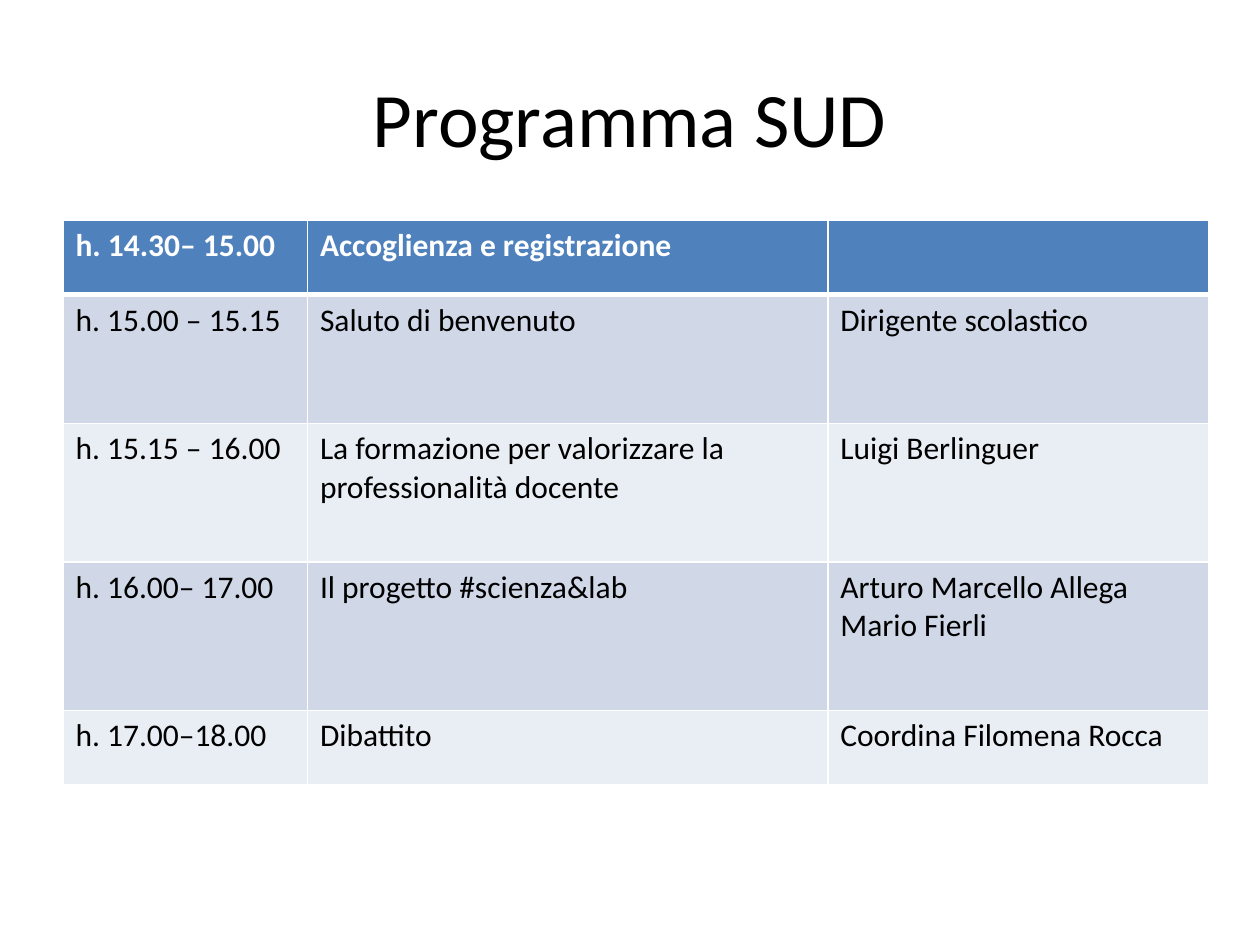
"""Build the "Programma SUD" slide: a title above a timetable."""
import pptx
import pptx.dml.color
import pptx.enum.text
import pptx.oxml
import pptx.oxml.ns
import pptx.util
from pptx.util import Inches

COLOURS = {
    "text": "000000",
    "white": "FFFFFF",
    "header": "4F81BD",
    "odd_row": "D0D8E8",
    "even_row": "E9EDF4",
}
PROGRAMME = [
    ("h. 14.30– 15.00", "Accoglienza e registrazione", ""),
    ("h. 15.00 – 15.15", "Saluto di benvenuto", "Dirigente scolastico"),
    ("h. 15.15 – 16.00", "La formazione per valorizzare la professionalità docente", "Luigi Berlinguer"),
    ("h. 16.00– 17.00", "Il progetto #scienza&lab", "Arturo Marcello Allega\nMario Fierli"),
    ("h. 17.00–18.00", "Dibattito", "Coordina Filomena Rocca"),
]
COLUMN_WIDTHS = [1.94, 4.13, 3.02]
ROW_HEIGHTS = [0.59, 1.02, 1.1, 1.18, 0.59]


def format_text(text_frame, colour, **font_values):
    for paragraph in text_frame.paragraphs:
        paragraph.font.color.rgb = pptx.dml.color.RGBColor.from_string(COLOURS[colour])
        for name, value in {"name": "Calibri", **font_values}.items():
            setattr(paragraph.font, name, value)
        for run in paragraph.runs:
            run.font.color.rgb = pptx.dml.color.RGBColor.from_string(COLOURS[colour])
            for name, value in {"name": "Calibri", **font_values}.items():
                setattr(run.font, name, value)


def add_border(cell, side, points):
    cell._tc.get_or_add_tcPr().append(pptx.oxml.parse_xml(
        f'<a:ln{side} {pptx.oxml.ns.nsdecls("a")} w="{pptx.util.Pt(points)}">'
        f'<a:solidFill><a:srgbClr val="{COLOURS["white"]}"/></a:solidFill></a:ln{side}>'
    ))


presentation = pptx.Presentation()
presentation.slide_width = Inches(10)
presentation.slide_height = Inches(7.5)
slide = presentation.slides.add_slide(presentation.slide_layouts[6])

title = slide.shapes.add_textbox(Inches(0.5), Inches(0.3), Inches(9), Inches(1.25))
title_frame = title.text_frame
title_frame.text = "Programma SUD"
title_frame.word_wrap = True
title_frame.vertical_anchor = pptx.enum.text.MSO_ANCHOR.MIDDLE
title_frame.paragraphs[0].alignment = pptx.enum.text.PP_ALIGN.CENTER
format_text(title_frame, "text", size=pptx.util.Pt(44))

table = slide.shapes.add_table(
    len(PROGRAMME), len(COLUMN_WIDTHS), Inches(0.5), Inches(1.75),
    Inches(sum(COLUMN_WIDTHS)), Inches(sum(ROW_HEIGHTS)),
).table
for column, width in zip(table.columns, COLUMN_WIDTHS):
    column.width = Inches(width)
for row, height in zip(table.rows, ROW_HEIGHTS):
    row.height = Inches(height)

for row_index, entries in enumerate(PROGRAMME):
    is_header = row_index == 0
    fill_name = "header" if is_header else "odd_row" if row_index % 2 else "even_row"
    for column_index, entry in enumerate(entries):
        cell = table.cell(row_index, column_index)
        cell.text = entry
        format_text(cell.text_frame, "white" if is_header else "text",
                    size=pptx.util.Pt(18), bold=is_header)
        borders = {"L": 1, "R": 1, "T": 3 if row_index == 1 else 1, "B": 3 if is_header else 1}
        for side, points in borders.items():
            add_border(cell, side, points)
        cell.fill.solid()
        cell.fill.fore_color.rgb = pptx.dml.color.RGBColor.from_string(COLOURS[fill_name])

presentation.save("out.pptx")
